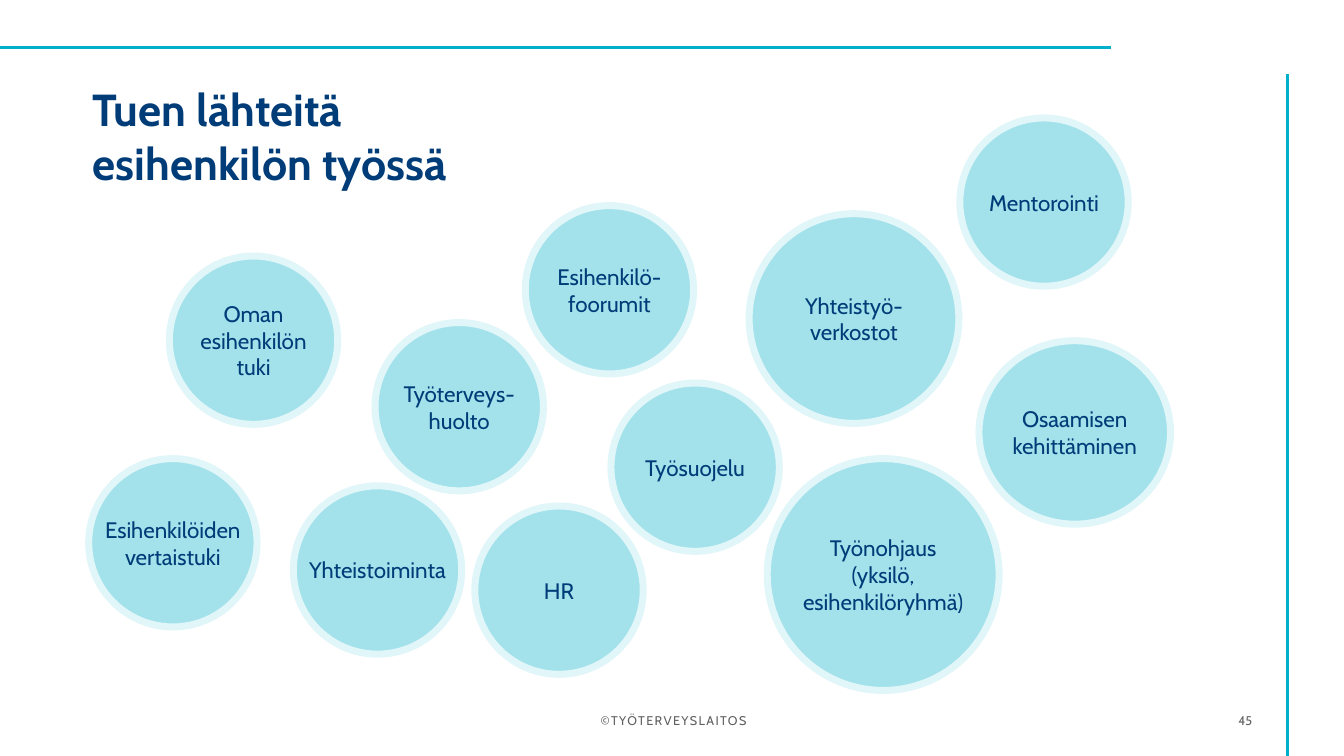
from lxml import etree
from pptx import Presentation
from pptx.dml.color import RGBColor
from pptx.enum.shapes import MSO_CONNECTOR, MSO_SHAPE
from pptx.enum.text import MSO_ANCHOR, MSO_AUTO_SIZE, PP_ALIGN
from pptx.oxml.ns import qn
from pptx.util import Inches, Pt

STRAIGHT = MSO_CONNECTOR.STRAIGHT
OVAL = MSO_SHAPE.OVAL
MIDDLE, BOTTOM = MSO_ANCHOR.MIDDLE, MSO_ANCHOR.BOTTOM
LEFT, CENTER, RIGHT = PP_ALIGN.LEFT, PP_ALIGN.CENTER, PP_ALIGN.RIGHT

NAVY = RGBColor(0x00, 0x3C, 0x78)
TURQUOISE = RGBColor(0x00, 0xB0, 0xCA)
BUBBLE = RGBColor(0x66, 0xD0, 0xDF)
RING = RGBColor(0xE0, 0xF6, 0xF9)
GRAY = RGBColor(0x60, 0x60, 0x60)
FONT = "Cabin"


def add_span(para, text, size, color, bold=False):
    span = para.add_run()
    span.text = text
    span.font.name = FONT
    span.font.size = Pt(size)
    span.font.bold = bold
    span.font.color.rgb = color
    return span


def clear_margins(frame):
    frame.margin_left = frame.margin_right = 0
    frame.margin_top = frame.margin_bottom = 0


deck = Presentation()
deck.slide_width = Inches(13.33)
deck.slide_height = Inches(7.5)
page = deck.slides.add_slide(deck.slide_layouts[5])

# Frame lines along the top and the right
for x1, y1, x2, y2 in [(0, 0.47, 11.02, 0.47), (12.77, 7.5, 12.77, 0.73)]:
    line = page.shapes.add_connector(
        STRAIGHT, Inches(x1), Inches(y1), Inches(x2), Inches(y2))
    line.line.color.rgb = TURQUOISE
    line.line.width = Pt(1.85)
    etree.SubElement(line._element.spPr, qn("a:effectLst"))

# Title
title = page.shapes.title
title.left, title.top = Inches(0.92), Inches(1.03)
title.width, title.height = Inches(11.26), Inches(0.85)
frame = title.text_frame
clear_margins(frame)
frame.word_wrap = True
frame.auto_size = MSO_AUTO_SIZE.NONE
frame.vertical_anchor = BOTTOM
para = frame.paragraphs[0]
para.alignment = LEFT
add_span(para, "Tuen lähteitä", 32, NAVY, True)
para.add_line_break()
add_span(para, "esihenkilön työssä", 32, NAVY, True)

# Sources of support: left, top, width, height, lines of text
SMALL = (1.67, 1.67)
sources = [
    (1.68, 2.54, *SMALL, ["Oman", "esihenkilön", "tuki"]),
    (0.88, 4.55, *SMALL, ["Esihenkilöiden", "vertaistuki"]),
    (3.72, 3.2, *SMALL, ["Työterveys-", "huolto"]),
    (2.91, 4.82, *SMALL, ["Yhteistoiminta"]),
    (5.21, 2.04, *SMALL, ["Esihenkilö-", "foorumit"]),
    (6.06, 3.8, *SMALL, ["Työsuojelu"]),
    (4.71, 5.02, *SMALL, ["HR"]),
    (7.43, 2.12, 2.08, 2.08, ["Yhteistyö-", "verkostot"]),
    (7.61, 4.55, 2.3, 2.3, ["Työnohjaus", "(yksilö,", "esihenkilöryhmä)"]),
    (9.52, 1.17, *SMALL, ["Mentorointi"]),
    (9.71, 3.38, 1.9, 1.82, ["Osaamisen", "kehittäminen"]),
]
for left, top, width, height, lines in sources:
    bubble = page.shapes.add_shape(
        OVAL, Inches(left), Inches(top), Inches(width), Inches(height))
    bubble.shadow.inherit = False
    bubble.fill.solid()
    bubble.fill.fore_color.rgb = BUBBLE
    color = bubble._element.spPr.find(qn("a:solidFill")).find(qn("a:srgbClr"))
    etree.SubElement(color, qn("a:alpha")).set("val", "60000")
    bubble.line.color.rgb = RING
    bubble.line.width = Pt(5)
    frame = bubble.text_frame
    clear_margins(frame)
    frame.word_wrap = False
    frame.vertical_anchor = MIDDLE
    for index, text in enumerate(lines):
        para = frame.add_paragraph() if index else frame.paragraphs[0]
        para.alignment = CENTER
        add_span(para, text, 16, NAVY)

# Footer and page number: left, width, alignment, letter spacing, text
footers = [
    (2.53, 8.3, CENTER, 100, "©TYÖTERVEYSLAITOS"),
    (11.19, 1.23, RIGHT, 0, "45"),
]
for left, width, alignment, spacing, text in footers:
    box = page.shapes.add_textbox(
        Inches(left), Inches(6.95), Inches(width), Inches(0.4))
    frame = box.text_frame
    clear_margins(frame)
    frame.word_wrap = True
    frame.vertical_anchor = MIDDLE
    para = frame.paragraphs[0]
    para.alignment = alignment
    span = add_span(para, text, 9, GRAY)
    span.font._element.set("spc", str(spacing))

deck.save("out.pptx")
